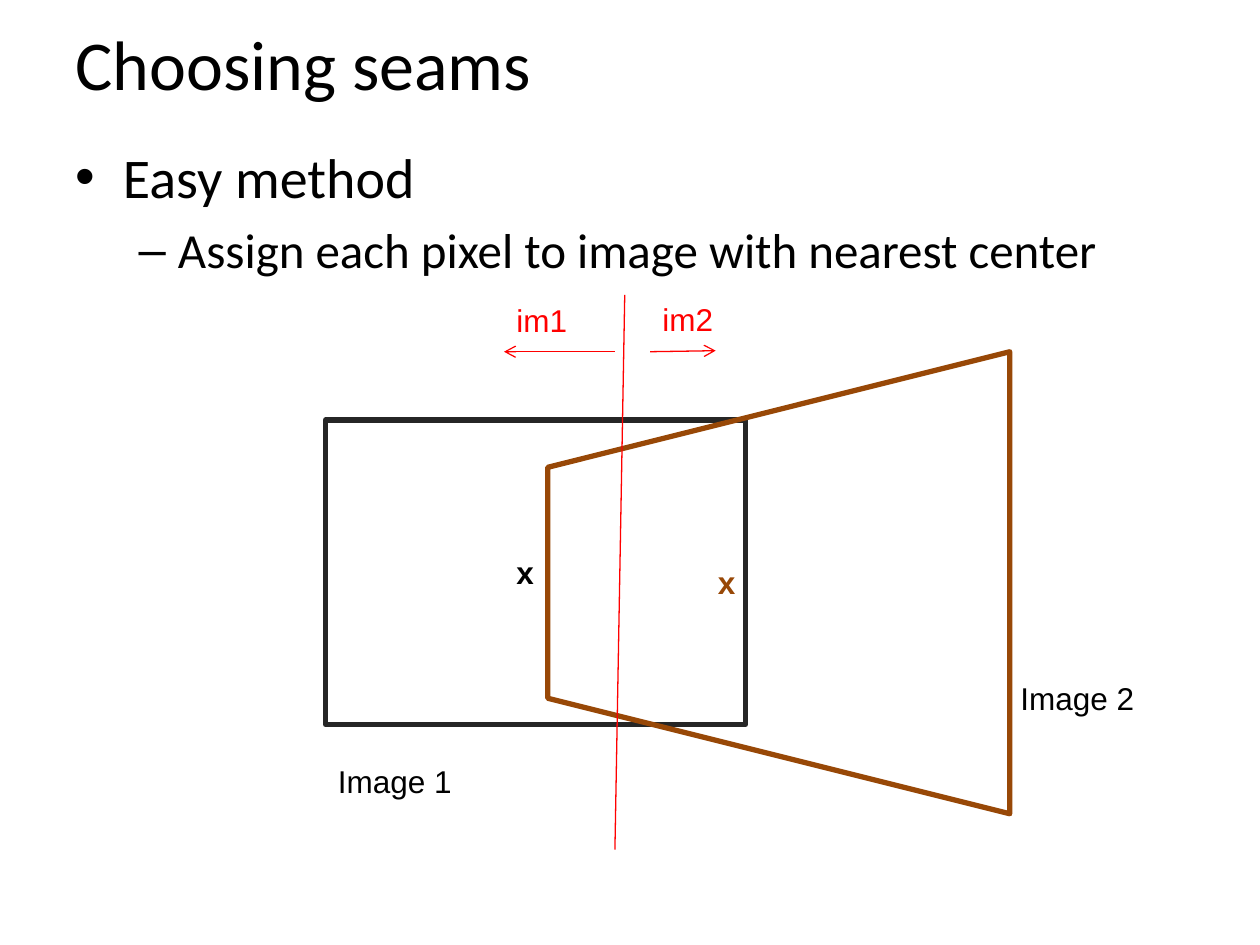
from lxml import etree
from pptx import Presentation
from pptx.dml.color import RGBColor
from pptx.enum.shapes import MSO_CONNECTOR, MSO_SHAPE
from pptx.enum.text import MSO_ANCHOR, MSO_AUTO_SIZE, PP_ALIGN
from pptx.oxml.ns import qn
from pptx.util import Pt

RECTANGLE = MSO_SHAPE.RECTANGLE
TRAPEZOID = MSO_SHAPE.TRAPEZOID
STRAIGHT = MSO_CONNECTOR.STRAIGHT
MIDDLE = MSO_ANCHOR.MIDDLE
LEFT = PP_ALIGN.LEFT
FIT_SHAPE = MSO_AUTO_SIZE.SHAPE_TO_FIT_TEXT

BLACK, CHARCOAL, BROWN, RED = "000000", "262626", "984807", "FF0000"


def color(hex_string):
    return RGBColor.from_string(hex_string)


def place(part, left, top, width, height):
    part.left, part.top = Pt(left), Pt(top)
    part.width, part.height = Pt(width), Pt(height)


def add_run(paragraph, text, size, font, hex_string, bold=None):
    run = paragraph.add_run()
    run.text = text
    run.font.size = Pt(size)
    run.font.name = font
    run.font.bold = bold
    run.font.color.rgb = color(hex_string)


def add_outline(slide, preset, box, hex_string, rotation=0):
    left, top, width, height = box
    outline = slide.shapes.add_shape(preset, Pt(left), Pt(top), Pt(width), Pt(height))
    outline.rotation = rotation
    outline.shadow.inherit = False
    outline.fill.background()
    outline.line.color.rgb = color(hex_string)
    outline.line.width = Pt(3)


def add_label(slide, text, left, top, width, hex_string, bold=None):
    label = slide.shapes.add_textbox(Pt(left), Pt(top), Pt(width), Pt(29))
    label.text_frame.word_wrap = False
    label.text_frame.auto_size = FIT_SHAPE
    add_run(label.text_frame.paragraphs[0], text, 18, "Arial", hex_string, bold)


def add_red_line(slide, start, end, arrow=False):
    line = slide.shapes.add_connector(STRAIGHT, *map(Pt, start + end))
    line.line.color.rgb = color(RED)
    line.line.width = Pt(0.75)
    if arrow:
        etree.SubElement(line.line._get_or_add_ln(), qn("a:tailEnd"), type="arrow")
    etree.SubElement(line._element.spPr, qn("a:effectLst"))


def fill_title(title, box):
    place(title, *box)
    title.text_frame.vertical_anchor = MIDDLE
    paragraph = title.text_frame.paragraphs[0]
    paragraph.alignment = LEFT
    add_run(paragraph, "Choosing seams", 40, "Calibri", BLACK)


def fill_method(body, box):
    place(body, *box)
    method = body.text_frame.paragraphs[0]
    add_run(method, "Easy method", 32, "Calibri", BLACK)
    rule = body.text_frame.add_paragraph()
    rule.level = 1
    add_run(rule, "Assign each pixel to image with nearest center", 28, "Calibri", BLACK)


def draw_seam_diagram(slide, left, top):
    def at(x, y):
        return left + x, top + y

    add_outline(slide, RECTANGLE, (*at(0, 72), 240, 174), CHARCOAL)
    add_outline(slide, TRAPEZOID, (*at(127, 33), 264, 264), BROWN, 270)
    add_red_line(slide, at(171, 0.5), at(165.4, 317.5))
    add_red_line(slide, at(165.4, 33), at(102, 33), arrow=True)
    add_red_line(slide, at(185.5, 33), at(223, 32.4), arrow=True)

    for text, x, y, width, hex_string, bold in (
        ("Image 1", 0, 264, 80, BLACK, None),
        ("Image 2", 390, 216.5, 80, BLACK, None),
        ("x", 102, 144.5, 24.5, BLACK, True),
        ("x", 217.2, 150, 24.5, BROWN, True),
        ("im1", 102, 0.5, 44, RED, None),
        ("im2", 185.5, 0, 44, RED, None),
    ):
        add_label(slide, text, *at(x, y), width, hex_string, bold)


def main():
    deck = Presentation()
    deck.slide_width, deck.slide_height = Pt(720), Pt(540)
    slide = deck.slides.add_slide(deck.slide_layouts[1])
    fill_title(slide.shapes.title, (36, 0, 648, 72))
    fill_method(slide.placeholders[1], (36, 78, 648, 405))
    draw_seam_diagram(slide, 186, 168)
    deck.save("out.pptx")


if __name__ == "__main__":
    main()
